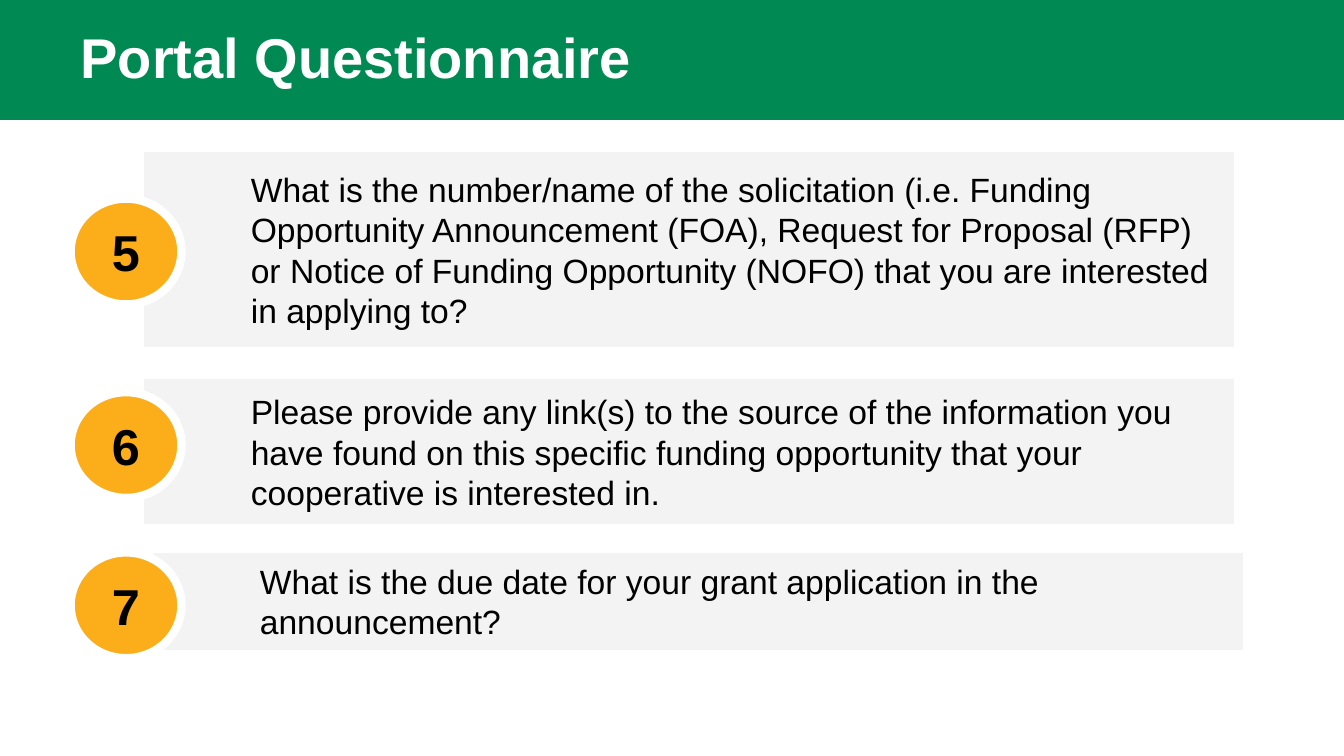
import pptx
import pptx.util
import pptx.dml.color
import pptx.enum.shapes
import pptx.enum.text

THEME = {
    "font": "Arial",
    "green": "008953", "gold": "FBAE1A", "grey": "F3F3F3",
    "white": "FFFFFF", "black": "000000",
    "title": 40, "number": 36, "body": 24, "border": 6,
}
SHAPE = pptx.enum.shapes.MSO_SHAPE
ALIGN = pptx.enum.text.PP_ALIGN

prs = pptx.Presentation()
prs.slide_width = pptx.util.Inches(13.33)
prs.slide_height = pptx.util.Inches(7.5)
col = prs.slide_width / 40
row = prs.slide_height / 30
s = prs.slides.add_slide(prs.slide_layouts[5])


def rgb(name):
    return pptx.dml.color.RGBColor.from_string(THEME[name])


def write(sp, text, size="body", color="black", bold=False, align=ALIGN.LEFT,
          margins=(0.1, 0.1, 0.1, 0.1), indent=0, spacing=1.0):
    tf = sp.text_frame
    tf.word_wrap = True
    tf.auto_size = pptx.enum.text.MSO_AUTO_SIZE.NONE
    tf.vertical_anchor = pptx.enum.text.MSO_ANCHOR.MIDDLE
    tf.margin_left, tf.margin_top, tf.margin_right, tf.margin_bottom = map(pptx.util.Inches, margins)
    p = tf.paragraphs[0]
    p.alignment = align
    p.line_spacing = spacing
    if indent:
        pPr = p._p.get_or_add_pPr()
        pPr.set("marL", str(pptx.util.Inches(indent)))
        pPr.set("indent", "0")
    r = p.add_run()
    r.text = text
    r.font.name = THEME["font"]
    r.font.size = pptx.util.Pt(THEME[size])
    r.font.bold = bold
    r.font.color.rgb = rgb(color)


band = s.shapes.add_shape(SHAPE.RECTANGLE, 0, 0, prs.slide_width, int(4.76 * row))
band.shadow.inherit = False
band.fill.solid()
band.fill.fore_color.rgb = rgb("green")
band.line.fill.background()

title = s.shapes.title
s.shapes._spTree.append(title._element)
title.left, title.top = int(2.1 * col), 0
title.width, title.height = int(36 * col), int(4.6 * row)
write(title, "Portal Questionnaire", size="title", color="white", bold=True,
      margins=(0.1, 0.05, 0.1, 0), spacing=0.9)

questions = [
    ("5", 4.17, 5.88, 8.04, 7.88,
     "What is the number/name of the solicitation (i.e. Funding Opportunity Announcement (FOA), "
     "Request for Proposal (RFP) or Notice of Funding Opportunity (NOFO) that you are interested "
     "in applying to?"),
    ("6", 4.17, 14.88, 6.08, 15.56,
     "Please provide any link(s) to the source of the information you have found on this specific "
     "funding opportunity that your cooperative is interested in."),
    ("7", 4.44, 21.76, 4.2, 21.92,
     "What is the due date for your grant application in the announcement?"),
]

for number, left, top, height, badge_top, question in questions:
    parts = [
        (SHAPE.RECTANGLE, left, top, 32.67, height, "grey", question, {"indent": 1}),
        (SHAPE.OVAL, 2.1, badge_top, 3.3, 4.2, "gold", number,
         {"size": "number", "bold": True, "align": ALIGN.CENTER}),
    ]
    for kind, x, y, w, h, fill, text, style in parts:
        sp = s.shapes.add_shape(kind, int(x * col), int(y * row), int(w * col), int(h * row))
        sp.shadow.inherit = False
        sp.fill.solid()
        sp.fill.fore_color.rgb = rgb(fill)
        sp.line.color.rgb = rgb("white")
        sp.line.width = pptx.util.Pt(THEME["border"])
        write(sp, text, **style)

prs.save("out.pptx")
